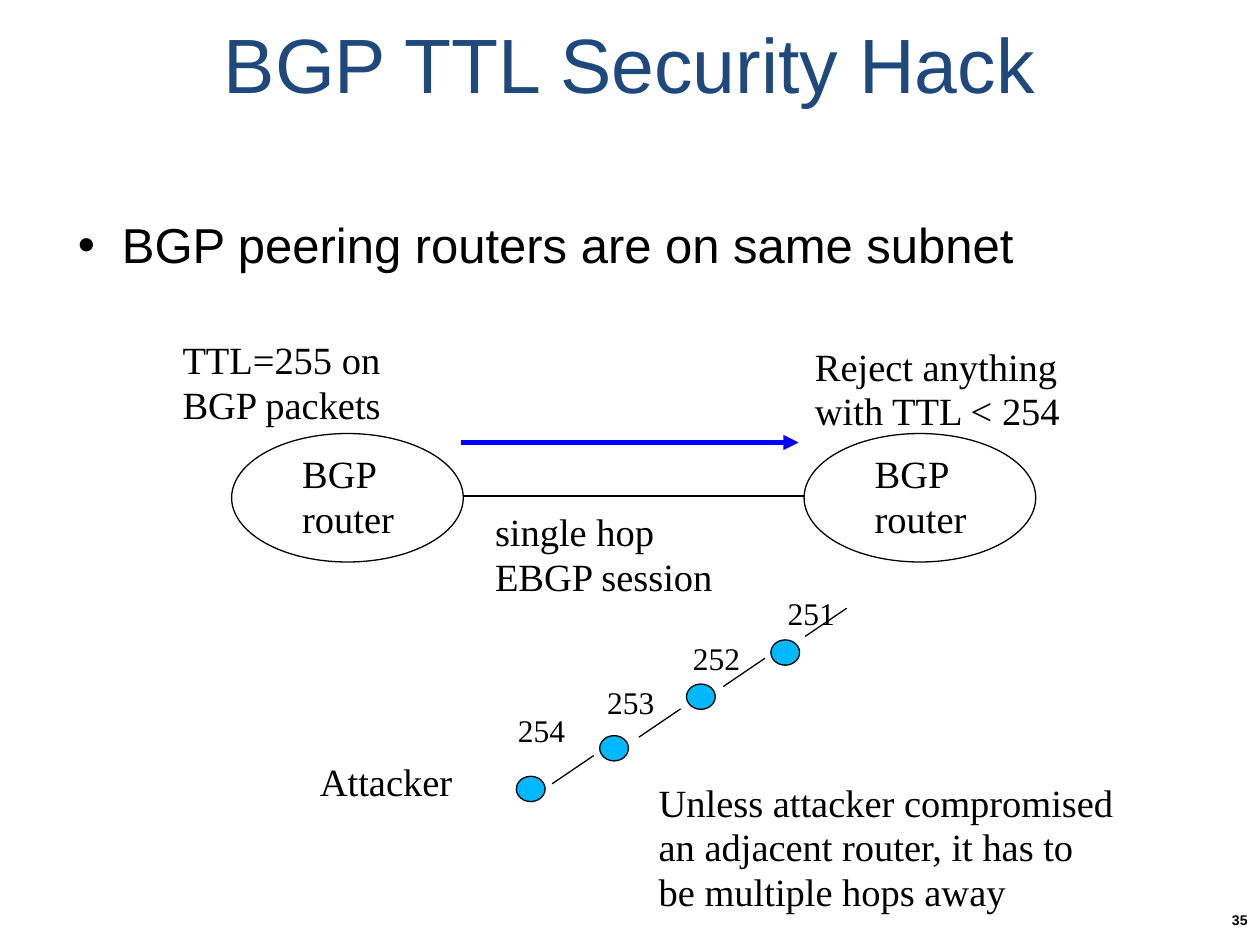
from dataclasses import dataclass

from lxml import etree
from pptx import Presentation
from pptx.dml.color import RGBColor
from pptx.enum.shapes import MSO_CONNECTOR, MSO_SHAPE
from pptx.enum.text import MSO_ANCHOR, MSO_AUTO_SIZE, PP_ALIGN
from pptx.oxml.ns import qn
from pptx.util import Cm, Pt

ELLIPSE = MSO_SHAPE.OVAL
STRAIGHT = MSO_CONNECTOR.STRAIGHT
MIDDLE = MSO_ANCHOR.MIDDLE
LEFT, CENTER, RIGHT = PP_ALIGN.LEFT, PP_ALIGN.CENTER, PP_ALIGN.RIGHT

COLORS = {"title": "1F497D", "ink": "000000", "packet": "0000FF", "hop": "00B8FF"}
SANS, SERIF = "Arial", "Times New Roman"

ROUTER_TOP, ROUTER_SIZE = 8.74, (4.67, 2.59)
ROUTER_LEFTS = (4.67, 16.21)
DOT_SIZE = (0.58, 0.51)
LINK_RUN, LINK_RISE = 0.84, 0.57


@dataclass
class Note:
    text: str
    left: float
    top: float
    width: float
    height: float
    size: float = 22


@dataclass
class Hop:
    ttl: str
    label: tuple[float, float]
    dot: tuple[float, float]
    link: tuple[float, float]


NOTES = [
    Note("single hop\nEBGP session", 9.98, 10.29, 4.42, 1.8),
    Note("TTL=255 on\nBGP packets", 3.68, 6.83, 4.19, 1.8),
    Note("Reject anything\nwith TTL < 254", 16.43, 6.96, 4.98, 1.8),
    Note("Attacker", 6.45, 15.34, 2.67, 0.91),
    Note("Unless attacker compromised\nan adjacent router, it has to\nbe multiple hops away",
         13.28, 15.75, 9.17, 2.72),
]

# From the attacker towards the router
HOPS = [
    Hop("254", (10.44, 14.38), (10.41, 15.65), (11.13, 15.8)),
    Hop("253", (12.24, 13.82), (12.09, 14.83), (12.88, 14.86)),
    Hop("252", (13.97, 12.93), (13.84, 13.79), (14.58, 13.84)),
    Hop("251", (15.88, 12.01), (15.54, 12.9), (16.23, 12.83)),
]


def color(name: str) -> RGBColor:
    return RGBColor.from_string(COLORS[name])


def write(frame, text: str, size: float, font: str = SERIF, ink: str = "ink",
          align=LEFT, spacing: float = 0.97, bold: bool = False) -> None:
    frame.text = text
    frame.margin_left = frame.margin_right = frame.margin_top = frame.margin_bottom = 0
    for paragraph in frame.paragraphs:
        paragraph.alignment = align
        paragraph.line_spacing = spacing
        for run in paragraph.runs:
            run.font.size = Pt(size)
            run.font.name = font
            run.font.bold = bold
            run.font.color.rgb = color(ink)


def add_note(slide, note: Note) -> None:
    box = slide.shapes.add_textbox(Cm(note.left), Cm(note.top), Cm(note.width), Cm(note.height))
    write(box.text_frame, note.text, note.size)


def add_ellipse(slide, left: float, top: float, size: tuple[float, float], fill: str = ""):
    ellipse = slide.shapes.add_shape(ELLIPSE, Cm(left), Cm(top), *map(Cm, size))
    ellipse.shadow.inherit = False
    if fill:
        ellipse.fill.solid()
        ellipse.fill.fore_color.rgb = color(fill)
    else:
        ellipse.fill.background()
    ellipse.line.color.rgb = color("ink")
    ellipse.line.width = Pt(0.75)
    return ellipse


def add_line(slide, start: tuple[float, float], end: tuple[float, float],
             ink: str = "ink", width: float = 0.75, arrow: bool = False) -> None:
    line = slide.shapes.add_connector(STRAIGHT, *map(Cm, start + end))
    line.line.color.rgb = color(ink)
    line.line.width = Pt(width)
    if arrow:
        etree.SubElement(line.line._get_or_add_ln(), qn("a:tailEnd"), type="triangle")
    etree.SubElement(line._element.spPr, qn("a:effectLst"))


def add_bullet(paragraph) -> None:
    properties = paragraph._p.get_or_add_pPr()
    properties.set("marL", str(Cm(1.19)))
    properties.set("indent", str(-Cm(0.89)))
    etree.SubElement(properties, qn("a:buFont"), typeface=SANS)
    etree.SubElement(properties, qn("a:buChar"), char="•")


def main() -> None:
    prs = Presentation()
    prs.slide_width, prs.slide_height = Cm(25.4), Cm(19.05)
    slide = prs.slides.add_slide(prs.slide_layouts[5])

    # Title
    title = slide.shapes.title
    title.left, title.top, title.width, title.height = Cm(1.27), Cm(0), Cm(22.86), Cm(2.54)
    title.text_frame.auto_size = MSO_AUTO_SIZE.NONE
    title.text_frame.vertical_anchor = MIDDLE
    write(title.text_frame, "BGP TTL Security Hack", 44, SANS, "title", CENTER, 1.0)

    # Bullet point
    point = slide.shapes.add_textbox(Cm(1.27), Cm(4.45), Cm(22.86), Cm(12.57)).text_frame
    point.word_wrap = True
    write(point, "BGP peering routers are on same subnet", 28, SANS, spacing=0.9)
    add_bullet(point.paragraphs[0])

    # Slide number
    number = slide.shapes.add_textbox(Cm(23.65), Cm(18.03), Cm(1.75), Cm(1.02)).text_frame
    number.word_wrap = True
    number.vertical_anchor = MIDDLE
    write(number, "35", 8, SANS, align=RIGHT, spacing=1.0, bold=True)
    number.margin_right = Cm(0.25)

    # Peering routers
    for left in ROUTER_LEFTS:
        router = add_ellipse(slide, left, ROUTER_TOP, ROUTER_SIZE).text_frame
        router.word_wrap = True
        router.vertical_anchor = MIDDLE
        write(router, "BGP router", 22)
        router.margin_left = Cm(0.74)

    # Session and packet flow
    add_line(slide, (ROUTER_LEFTS[0] + ROUTER_SIZE[0], 10), (ROUTER_LEFTS[1], 10))
    add_line(slide, (9.3, 8.92), (16.1, 8.92), "packet", 2.89, arrow=True)

    for note in NOTES:
        add_note(slide, note)

    # Attack path
    for hop in HOPS:
        x, y = hop.link
        add_ellipse(slide, *hop.dot, DOT_SIZE, "hop")
        add_line(slide, hop.link, (x + LINK_RUN, y - LINK_RISE))
        add_note(slide, Note(hop.ttl, *hop.label, 0.97, 0.74, 18))

    prs.save("out.pptx")


if __name__ == "__main__":
    main()
